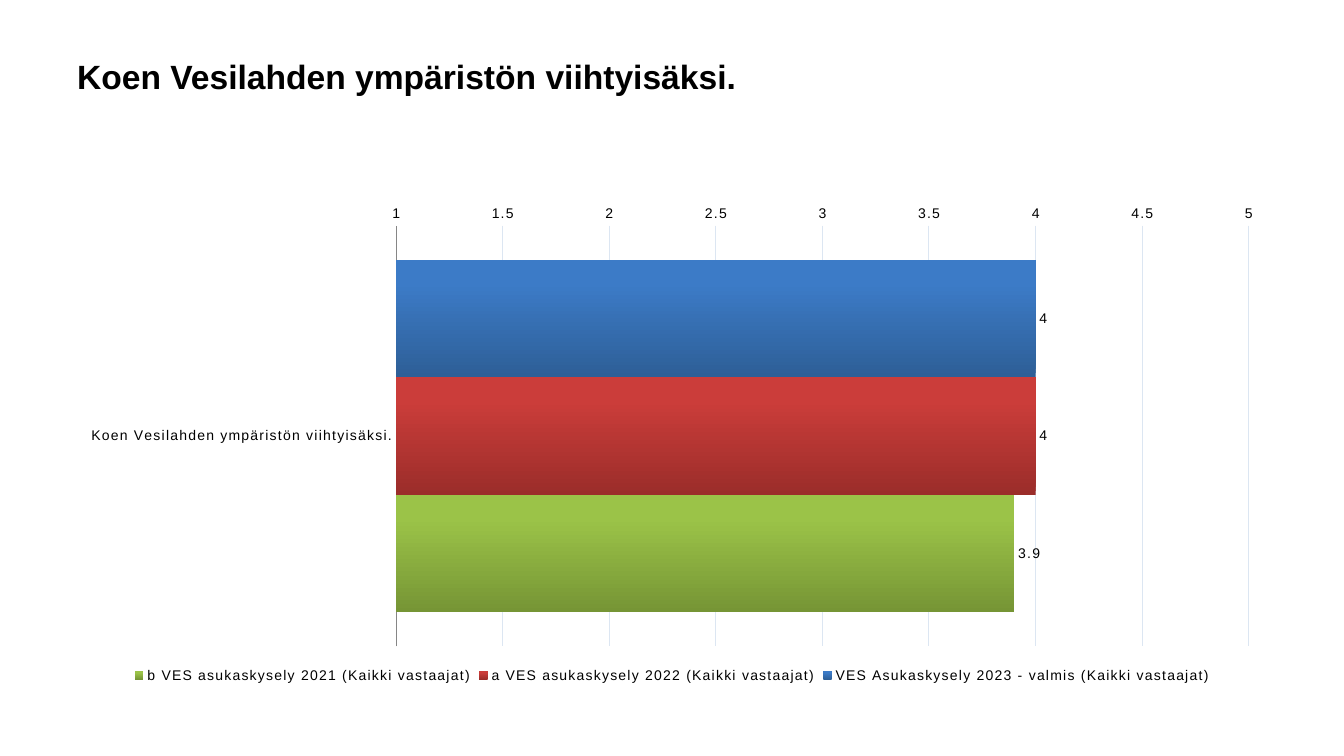
from pptx import Presentation
from pptx.util import Pt
from pptx.dml.color import RGBColor
from pptx.chart.data import CategoryChartData as Data
from pptx.enum.chart import XL_CHART_TYPE as Kind, XL_LEGEND_POSITION as Place
from pptx.enum.chart import XL_LABEL_POSITION as Spot, XL_TICK_MARK as Tick
from pptx.enum.chart import XL_AXIS_CROSSES as Cross
from pptx.enum.text import MSO_ANCHOR as Anchor

TITLE = "Koen Vesilahden ympäristön viihtyisäksi."
SERIES = [
    ("VES Asukaskysely 2023 - valmis (Kaikki vastaajat)", 4, "2E5F97", "3C7BC7"),
    ("a VES asukaskysely 2022 (Kaikki vastaajat)", 4, "9B2D2A", "CB3D3A"),
    ("b VES asukaskysely 2021 (Kaikki vastaajat)", 3.9, "769535", "9BC348"),
]
LEFT, WIDTH = 48, 864


def paint(color, code):
    color.rgb = RGBColor.from_string(code)


def style(font, size):
    font.name = "Arial"
    font.size = Pt(size)
    paint(font.color, "000000")


def add_title(slide):
    box = slide.shapes.add_textbox(Pt(LEFT), Pt(26), Pt(WIDTH), Pt(57))
    frame = box.text_frame
    frame.word_wrap = True
    frame.vertical_anchor = Anchor.MIDDLE
    line = frame.paragraphs[0]
    line.text = TITLE
    style(line.font, 24)
    line.font.bold = True


def add_bars(slide):
    data = Data()
    data.categories = [TITLE]
    for name, value, *_ in SERIES:
        data.add_series(name, [value])
    chart = slide.shapes.add_chart(
        Kind.BAR_CLUSTERED, Pt(LEFT), Pt(140), Pt(WIDTH), Pt(351), data).chart
    chart.has_title = False
    style(chart.font, 10)

    chart.has_legend = True
    chart.legend.position = Place.BOTTOM
    chart.legend.include_in_layout = False
    style(chart.legend.font, 10)

    cats, vals = chart.category_axis, chart.value_axis
    for axis in (cats, vals):
        axis.major_tick_mark = axis.minor_tick_mark = Tick.NONE
        style(axis.tick_labels.font, 10)
    cats.reverse_order = True
    cats.crosses = Cross.MAXIMUM
    paint(cats.format.line.color, "868686")
    vals.minimum_scale, vals.maximum_scale = 1, 5
    vals.major_unit = 0.5
    vals.format.line.fill.background()
    grid = vals.major_gridlines.format.line
    grid.width = Pt(0.75)
    paint(grid.color, "DCE6F2")

    plot = chart.plots[0]
    plot.gap_width = 58
    plot.overlap = 0
    plot.vary_by_categories = False
    for bar, (_, _, dark, light) in zip(plot.series, SERIES):
        fill = bar.format.fill
        fill.gradient()
        fill.gradient_angle = 90
        for stop, code, place in zip(fill.gradient_stops, (dark, light), (0, 0.8)):
            paint(stop.color, code)
            stop.position = place
        labels = bar.data_labels
        labels.show_value = True
        labels.position = Spot.OUTSIDE_END
        style(labels.font, 10)

    for run in chart.element.xpath("//a:defRPr"):
        run.set("spc", "100")


def main():
    deck = Presentation()
    deck.slide_width, deck.slide_height = Pt(960), Pt(540)
    slide = deck.slides.add_slide(deck.slide_layouts[6])
    add_title(slide)
    add_bars(slide)
    deck.save("out.pptx")


if __name__ == "__main__":
    main()
